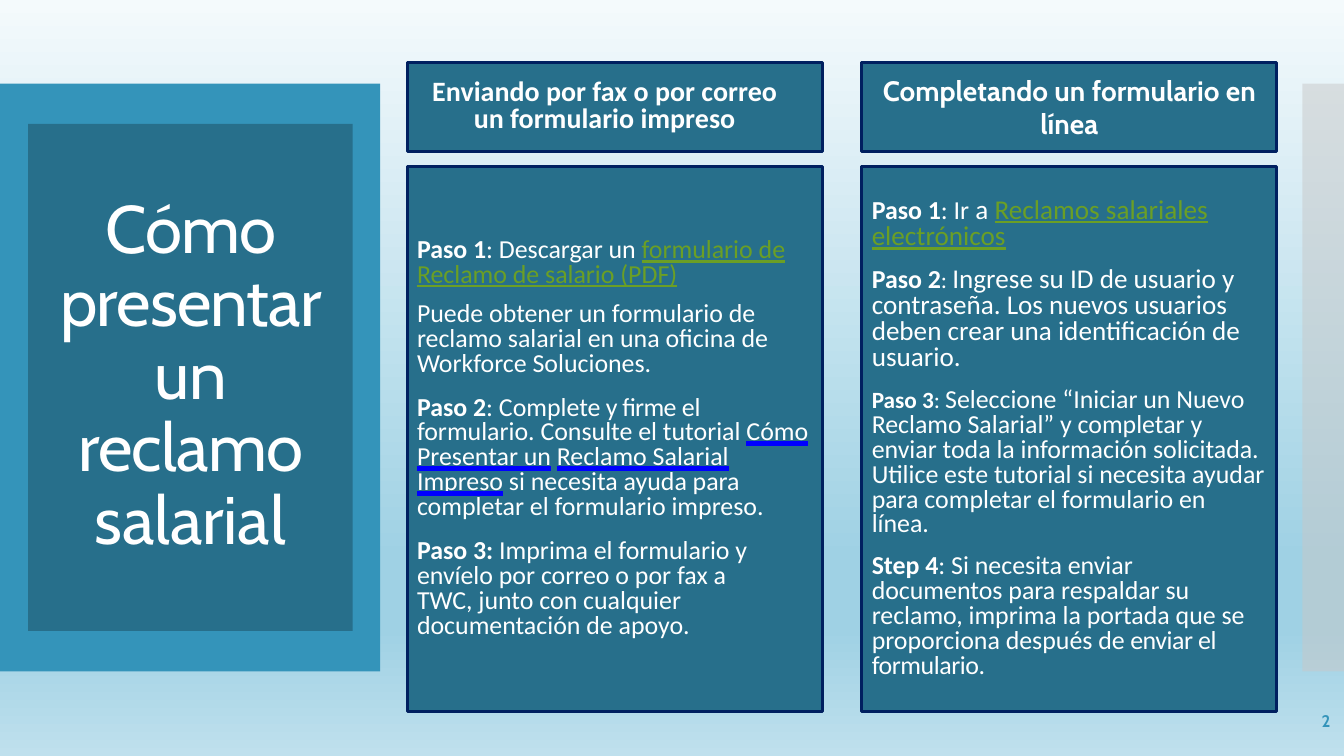
from lxml import etree
from pptx import Presentation
from pptx.dml.color import RGBColor
from pptx.enum.dml import MSO_FILL
from pptx.enum.shapes import MSO_SHAPE
from pptx.enum.text import MSO_ANCHOR, MSO_AUTO_SIZE, MSO_UNDERLINE, PP_ALIGN
from pptx.oxml.ns import qn
from pptx.util import Cm, Pt

RECT = MSO_SHAPE.RECTANGLE
MIDDLE = MSO_ANCHOR.MIDDLE
NO_FIT = MSO_AUTO_SIZE.NONE
HEAVY = MSO_UNDERLINE.HEAVY_LINE
SOLID = MSO_FILL.SOLID
LEFT, CENTER, RIGHT = PP_ALIGN.LEFT, PP_ALIGN.CENTER, PP_ALIGN.RIGHT

COLORS = {
    "band": "3494BA", "panel": "276F8B", "border": "002060", "white": "FFFFFF",
    "edge": "C8C8C8", "link": "6B9F25", "tutorial": "0000FF",
}
SKY = [(0, "F4FAFC"), (74, "9FD1E4"), (83, "9FD1E4"), (100, "BFE0ED")]


def rgb(name):
    return RGBColor.from_string(COLORS[name])


def add_color(parent, value):
    return etree.SubElement(parent, qn("a:srgbClr"), val=value)


class Deck:
    def __init__(self):
        self.prs = Presentation()
        self.prs.slide_width, self.prs.slide_height = Cm(33.87), Cm(19.05)
        self.s = self.prs.slides.add_slide(self.prs.slide_layouts[5])

    def background(self, stops):
        fill = self.s.background.fill
        fill.gradient()
        fill.gradient_angle = 270
        gs_list = self.s._element.find(".//" + qn("a:gsLst"))
        for gs in list(gs_list):
            gs_list.remove(gs)
        for pos, value in stops:
            gs = etree.SubElement(gs_list, qn("a:gs"), pos=str(pos * 1000))
            add_color(gs, value)

    def rect(self, box, color, border=None, alpha=None):
        sp = self.s.shapes.add_shape(RECT, *map(Cm, box))
        sp.shadow.inherit = False
        sp.fill.solid()
        sp.fill.fore_color.rgb = rgb(color)
        if border:
            sp.line.color.rgb = rgb(border)
            sp.line.width = Pt(2.25)
        else:
            sp.line.fill.background()
        if alpha and sp.fill.type == SOLID:
            clr = sp._element.spPr.find(qn("a:solidFill"))[0]
            etree.SubElement(clr, qn("a:alpha"), val=str(alpha * 1000))
        return sp

    def frame(self, sp, inset=0.25):
        tf = sp.text_frame
        tf.word_wrap = True
        tf.auto_size = NO_FIT
        tf.vertical_anchor = MIDDLE
        tf.margin_left = tf.margin_right = Cm(inset)
        tf.margin_top = tf.margin_bottom = Cm(0.13)
        return tf

    def run(self, p, text, size, font, color="white", style="", spc=0):
        r = p.add_run()
        r.text = text
        r.font.size = Pt(size)
        r.font.bold = style == "bold"
        r.font.color.rgb = rgb("link" if style == "link" else color)
        rPr = r._r.get_or_add_rPr()
        if style == "link":
            r.font.underline = True
        elif style == "tutorial":
            r.font.underline = HEAVY
            line = etree.SubElement(rPr, qn("a:uFill"))
            add_color(etree.SubElement(line, qn("a:solidFill")), COLORS["tutorial"])
        if spc:
            rPr.set("spc", str(round(spc * 100)))
        r.font.name = font

    def paragraph(self, p, runs, size, font, align=LEFT, spacing=1.0,
                  before=0, after=0, right=0):
        p.alignment = align
        p.line_spacing = spacing
        p.space_before, p.space_after = Pt(before), Pt(after)
        if right:
            p._p.get_or_add_pPr().set("marR", str(Cm(right)))
        for text, options in runs:
            self.run(p, text, **{"size": size, "font": font, **options})

    def title(self, box, runs):
        sp = self.s.shapes.title
        sp.left, sp.top, sp.width, sp.height = map(Cm, box)
        sp.fill.solid()
        sp.fill.fore_color.rgb = rgb("panel")
        self.s.shapes._spTree.append(sp._element)  # bring above the band
        tf = self.frame(sp, 0.5)
        self.paragraph(tf.paragraphs[0], runs, 48, "Cabin", CENTER, 0.9)

    def header(self, box, runs, font, **layout):
        tf = self.frame(self.rect(box, "panel", "border"))
        self.paragraph(tf.paragraphs[0], runs, 20, font, CENTER, **layout)

    def steps(self, box, steps, before, after):
        tf = self.frame(self.rect(box, "panel", "border"))
        for i, (runs, right) in enumerate(steps):
            p = tf.add_paragraph() if i else tf.paragraphs[0]
            self.paragraph(p, runs, 18.5, "Calibri", spacing=0.8,
                           before=before[i], after=after, right=right)

    def number(self, box, text):
        tf = self.frame(self.s.shapes.add_textbox(*map(Cm, box)))
        self.paragraph(tf.paragraphs[0], [(text, {"color": "band", **BOLD})],
                       12, "Cabin", RIGHT)


BOLD, LINK, TUTORIAL = ({"style": k} for k in ("bold", "link", "tutorial"))
PLAIN, LARGE = {}, {"size": 19.4}

# Each step: its runs and a right indent in cm
PAPER_STEPS = [
    ([("Paso 1", BOLD), (": Descargar un ", PLAIN),
      ("formulario de Reclamo de salario (PDF)", LINK)], 0),
    ([("Puede obtener un formulario de reclamo salarial en una oficina de "
       "Workforce Soluciones.", PLAIN)], 0),
    ([("Paso 2", BOLD), (": Complete", PLAIN), (" y firme ", {"spc": -0.4}),
      ("el formulario. Consulte el tutorial ", PLAIN),
      ("Cómo Presentar un", TUTORIAL), (" ", PLAIN),
      ("Reclamo Salarial Impreso", TUTORIAL),
      (" si necesita ayuda para completar el formulario impreso.", PLAIN)], 0),
    ([("Paso 3: ", BOLD),
      ("Imprima el formulario y envíelo por correo o por fax a TWC, junto con "
       "cualquier documentación de apoyo.", PLAIN)], 1.27),
]
ONLINE_STEPS = [
    ([("Paso 1", BOLD), (": Ir", PLAIN), (" a ", LARGE),
      ("Reclamos salariales electrónicos", {**LINK, **LARGE})], 0),
    ([("Paso 2", BOLD), (": ", {"size": 16.6}),
      ("Ingrese su ID de usuario y contraseña. Los nuevos usuarios deben crear "
       "una identificación de usuario.", LARGE)], 0),
    ([("Paso 3", {"size": 16.6, **BOLD}), (": ", {"size": 16.6}),
      ("Seleccione “Iniciar un Nuevo Reclamo Salarial” y completar y enviar toda "
       "la información solicitada. Utilice este tutorial si necesita ayudar para "
       "completar el formulario en línea.", PLAIN)], 0),
    ([("Step 4", BOLD),
      (": Si necesita enviar documentos para respaldar su reclamo, imprima la "
       "portada que se proporciona después de", PLAIN),
      (" enviar el formulario.", {"spc": -0.3})], 0),
]


def main():
    deck = Deck()
    deck.background(SKY)

    # Side bands and title
    deck.rect((0, 2.11, 9.58, 14.81), "band")
    deck.rect((32.82, 2.11, 1.05, 14.81), "edge", alpha=50)
    deck.title((0.71, 3.12, 8.18, 12.78),
               [("Cómo presentar un reclamo ", {"spc": -0.6}),
                ("salarial", {"spc": -0.1})])

    # Two columns: header above steps
    paper, online, width = 10.26, 21.72, 10.46
    deck.header((paper, 1.57, width, 2.26),
                [("Enviando por fax o por correo un formulario impreso", BOLD)],
                "Calibri", spacing=0.8, right=0.5)
    deck.steps((paper, 4.19, width, 13.74), PAPER_STEPS, (0, 0, 3.6, 3.6), 10)
    deck.header((online, 1.57, width, 2.24),
                [("Completando un formulario en línea", BOLD)], "Cabin")
    deck.steps((online, 4.19, width, 13.74), ONLINE_STEPS, (0, 12, 12, 12), 0)

    # Slide number
    deck.number((29.54, 17.65, 4.24, 1.02), "2")
    deck.prs.save("out.pptx")


if __name__ == "__main__":
    main()
